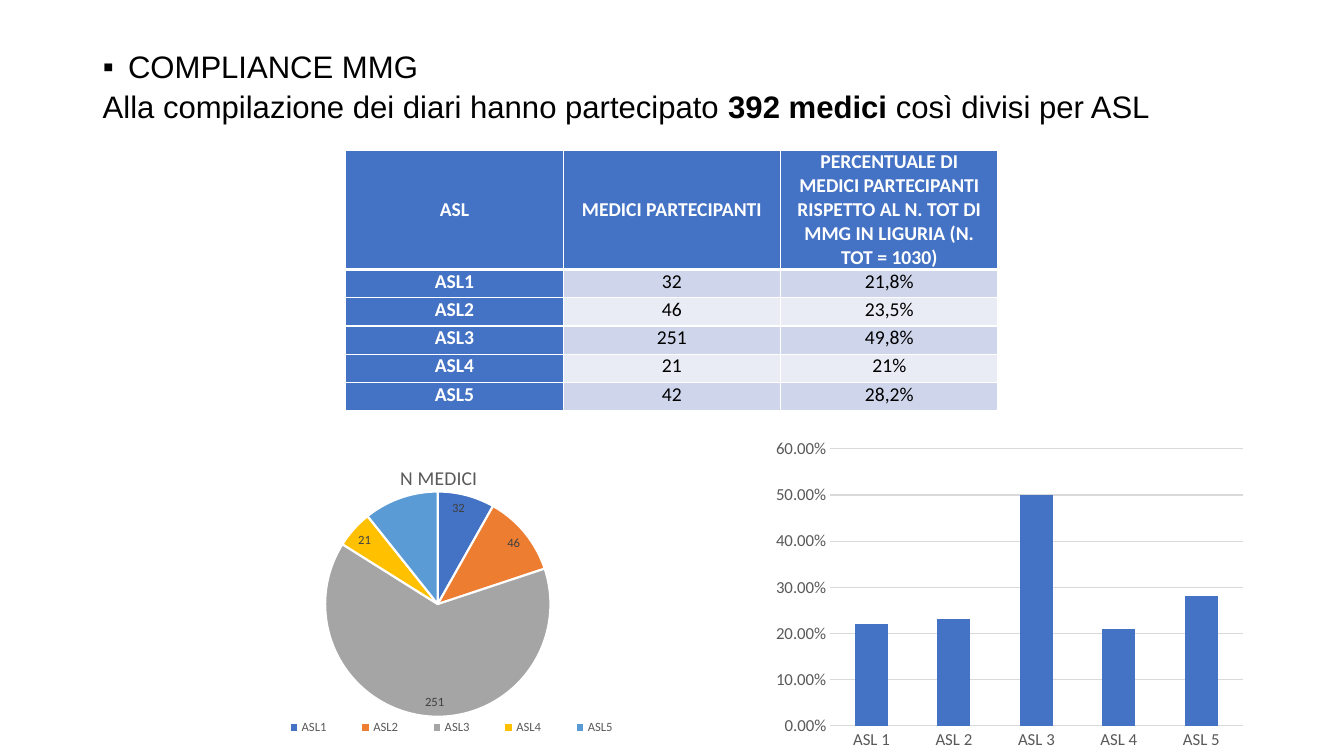
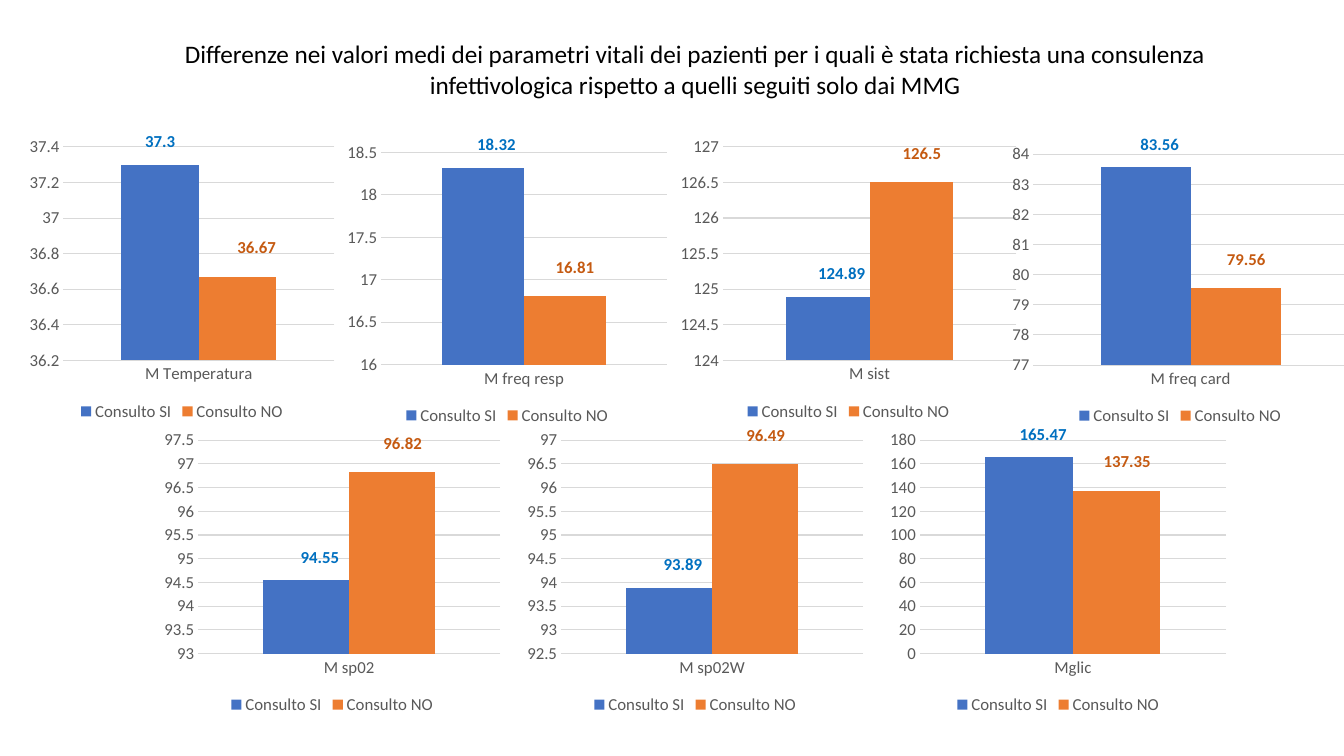
from lxml import etree
from pptx import Presentation
from pptx.chart.data import CategoryChartData
from pptx.dml.color import RGBColor
from pptx.enum.chart import XL_CHART_TYPE, XL_LABEL_POSITION, XL_LEGEND_POSITION, XL_TICK_MARK
from pptx.enum.text import MSO_ANCHOR, MSO_AUTO_SIZE, PP_ALIGN
from pptx.oxml.ns import qn
from pptx.util import Inches, Pt

COLUMNS, PIE = XL_CHART_TYPE.COLUMN_CLUSTERED, XL_CHART_TYPE.PIE
OUTSIDE, INSIDE = XL_LABEL_POSITION.OUTSIDE_END, XL_LABEL_POSITION.INSIDE_END
LEGEND_BOTTOM, NO_TICK = XL_LEGEND_POSITION.BOTTOM, XL_TICK_MARK.NONE
LEFT, CENTER = PP_ALIGN.LEFT, PP_ALIGN.CENTER
TOP, MIDDLE = MSO_ANCHOR.TOP, MSO_ANCHOR.MIDDLE
TITLE_ONLY = 5

# Shared look
BLACK, WHITE = RGBColor(0, 0, 0), RGBColor(255, 255, 255)
BLUE, ORANGE = RGBColor(0x44, 0x72, 0xC4), RGBColor(0xED, 0x7D, 0x31)
SLICES = [BLUE, ORANGE, RGBColor(0xA5, 0xA5, 0xA5), RGBColor(0xFF, 0xC0, 0),
          RGBColor(0x5B, 0x9B, 0xD5)]
BANDS = [RGBColor(0xCF, 0xD5, 0xEA), RGBColor(0xE9, 0xEB, 0xF5)]
GREY, GRID = RGBColor(0x59, 0x59, 0x59), RGBColor(0xD9, 0xD9, 0xD9)
DARK_GREY = RGBColor(0x40, 0x40, 0x40)
SI_LABEL, NO_LABEL = RGBColor(0, 0x70, 0xC0), RGBColor(0xC5, 0x5A, 0x11)
HEADING_FONT, BODY_FONT = "Arial", "Calibri"

# Slide 1 content
COMPLIANCE = "COMPLIANCE MMG"
PARTICIPATION = [("Alla compilazione dei diari hanno partecipato ", False),
                 ("392 medici", True), (" così divisi per ASL", False)]
HEADER = ["ASL", "MEDICI PARTECIPANTI",
          "PERCENTUALE DI MEDICI PARTECIPANTI RISPETTO AL N. TOT DI MMG "
          "IN LIGURIA (N. TOT = 1030)"]
DOCTORS = [("ASL1", 32, "21,8%"), ("ASL2", 46, "23,5%"), ("ASL3", 251, "49,8%"),
           ("ASL4", 21, "21%"), ("ASL5", 42, "28,2%")]
SHARES = {"ASL 1": 0.22, "ASL 2": 0.23, "ASL 3": 0.5, "ASL 4": 0.21, "ASL 5": 0.28}
TABLE_W = 6.47

# Slide 2 content: parameter, SI, NO, axis (minimum, maximum, step)
DIFFERENCES = ("Differenze nei valori medi dei parametri vitali dei pazienti per i quali è stata "
               "richiesta una consulenza infettivologica rispetto a quelli seguiti solo dai MMG")
VITALS = [("M Temperatura", 37.3, 36.67, (36.2, 37.4, 0.2)),
          ("M freq resp", 18.32, 16.81, (16, 18.5, 0.5)),
          ("M sist", 124.89, 126.5, (124, 127, 0.5)),
          ("M freq card", 83.56, 79.56, (77, 84, 1)),
          ("M sp02", 94.55, 96.82, (93, 97.5, 0.5)),
          ("M sp02W", 93.89, 96.49, (92.5, 97, 0.5)),
          ("Mglic", 165.47, 137.35, (0, 180, 20))]
CONSULTS = [("Consulto SI", BLUE, SI_LABEL), ("Consulto NO", ORANGE, NO_LABEL)]
VITAL_W, VITAL_H = 3.47, 2.92
UPPER_ROW = [(0.23, 1.3, 3.15), (3.38, 1.34, 3.3), (6.68, 1.3, VITAL_W), (9.97, 1.34, VITAL_W)]
LOWER_ROW = [(1.56 + 3.6 * column, 4.21, VITAL_W) for column in range(3)]
# Label shifts as shares of the chart, for SI and NO
LABEL_SHIFTS = [(0.04, -0.03), (0.03, -0.05)]
FIRST_SHIFTS = [(0, -0.03), (0.06, -0.05)]


def style_font(font, size, color=GREY, bold=False, name=BODY_FONT):
    font.size, font.bold, font.name = Pt(size), bold, name
    font.color.rgb = color


def write(frame, runs, size, color=BLACK, bold=False, name=BODY_FONT, align=LEFT,
          anchor=None, bullet=None):
    """Fill a text frame with one paragraph: a string or (text, bold) runs."""
    paragraph = frame.paragraphs[0]
    paragraph.alignment = align
    if anchor is not None:
        frame.word_wrap, frame.auto_size = True, MSO_AUTO_SIZE.NONE
        frame.vertical_anchor = anchor
    if bullet:
        properties = paragraph._p.get_or_add_pPr()
        properties.set("marL", str(Inches(0.25)))
        properties.set("indent", str(-Inches(0.25)))
        etree.SubElement(properties, qn("a:buFont")).set("typeface", name)
        etree.SubElement(properties, qn("a:buChar")).set("char", bullet)
    for text, strong in [(runs, bold)] if isinstance(runs, str) else runs:
        run = paragraph.add_run()
        run.text = text
        style_font(run.font, size, color, strong, name)


def place(shape, left, top, width, height):
    shape.left, shape.top = Inches(left), Inches(top)
    shape.width, shape.height = Inches(width), Inches(height)


def add_titled_slide(prs, text, box, **text_format):
    slide = prs.slides.add_slide(prs.slide_layouts[TITLE_ONLY])
    place(slide.shapes.title, *box)
    write(slide.shapes.title.text_frame, text, anchor=MIDDLE, **text_format)
    return slide


def set_layout(parent, index, **settings):
    """Give a chart part a manual position in shares of the chart."""
    for old in parent.findall(qn("c:layout")):
        parent.remove(old)
    layout = etree.Element(qn("c:layout"))
    manual = etree.SubElement(layout, qn("c:manualLayout"))
    for tag, value in settings.items():
        etree.SubElement(manual, qn("c:" + tag)).set("val", str(value))
    parent.insert(index, layout)


def hide_leader_lines(chart):
    for labels in chart._chartSpace.iter(qn("c:dLbls")):
        leader = labels.find(qn("c:showLeaderLines"))
        if leader is None:
            leader = etree.SubElement(labels, qn("c:showLeaderLines"))
        leader.set("val", "0")


def add_chart(slide, kind, box, categories, series, legend_size=None):
    data = CategoryChartData()
    data.categories = categories
    for name, values in series:
        data.add_series(name, values)
    chart = slide.shapes.add_chart(kind, *map(Inches, box), data).chart
    style_font(chart.font, 10, BLACK)
    chart.has_title = False
    chart.has_legend = legend_size is not None
    if legend_size:
        chart.legend.position = LEGEND_BOTTOM
        chart.legend.include_in_layout = False
        style_font(chart.legend.font, legend_size)
    return chart


def style_columns(chart, colors, scale, number_format="General"):
    plot = chart.plots[0]
    plot.gap_width, plot.overlap, plot.vary_by_categories = 150, 0, False
    for series, color in zip(plot.series, colors):
        series.format.fill.solid()
        series.format.fill.fore_color.rgb = color
    values = chart.value_axis
    values.minimum_scale, values.maximum_scale, values.major_unit = scale
    values.format.line.fill.background()
    values.tick_labels.number_format = number_format
    values.tick_labels.number_format_is_linked = False
    chart.category_axis.format.line.color.rgb = GRID
    values.major_gridlines.format.line.color.rgb = GRID
    values.major_gridlines.format.line.width = Pt(0.75)
    for axis in (values, chart.category_axis):
        axis.major_tick_mark = axis.minor_tick_mark = NO_TICK
        style_font(axis.tick_labels.font, 12)


def label_point(series, index, position, **font_format):
    label = series.points[index].data_label
    style_font(label.font, **font_format)
    label.position = position


def set_borders(cell, bottom):
    properties = cell._tc.get_or_add_tcPr()
    for side, width in (("L", 1), ("R", 1), ("T", 1), ("B", bottom)):
        line = etree.SubElement(properties, qn("a:ln" + side), w=str(Pt(width)))
        fill = etree.SubElement(line, qn("a:solidFill"))
        etree.SubElement(fill, qn("a:srgbClr"), val=str(WHITE))


def add_doctors_table(slide):
    rows = [HEADER, *DOCTORS]
    table = slide.shapes.add_table(len(rows), len(HEADER), Inches(3.43), Inches(1.49),
                                   Inches(TABLE_W), Inches(2.56)).table
    for column in table.columns:
        column.width = Inches(TABLE_W / len(HEADER))
    for r, row in enumerate(rows):
        table.rows[r].height = Inches(0.28 if r else 1.16)
        for c, value in enumerate(row):
            cell = table.cell(r, c)
            heading = r == 0 or c == 0
            cell.margin_left = cell.margin_right = Inches(0.09)
            cell.margin_top = cell.margin_bottom = 0
            cell.vertical_anchor = TOP if r else MIDDLE
            set_borders(cell, 1 if r else 3)
            cell.fill.solid()
            cell.fill.fore_color.rgb = BLUE if heading else BANDS[(r - 1) % 2]
            write(cell.text_frame, str(value), 14, WHITE if heading else BLACK,
                  bold=heading, align=CENTER)


def add_doctors_pie(slide):
    names, counts, _ = zip(*DOCTORS)
    chart = add_chart(slide, PIE, (1.59, 4.24, 5.45, 3.31), names,
                      [("N MEDICI", counts)], legend_size=9)
    chart.has_title = True
    write(chart.chart_title.text_frame, "N MEDICI", 14, GREY, align=CENTER)
    chart.plots[0].vary_by_categories = True
    series = chart.plots[0].series[0]
    series.data_labels.show_value = False
    for index, color in enumerate(SLICES):
        slice_format = series.points[index].format
        slice_format.fill.solid()
        slice_format.fill.fore_color.rgb = color
        slice_format.line.color.rgb = WHITE
        slice_format.line.width = Pt(1.5)
    for index in range(len(SLICES) - 1):  # the last slice has no label
        label_point(series, index, INSIDE, size=9, color=DARK_GREY)
    hide_leader_lines(chart)
    root = chart._chartSpace
    edges = {"xMode": "edge", "yMode": "edge"}
    set_layout(next(root.iter(qn("c:title"))), 1, **edges, x=0.43, y=0.1)
    set_layout(next(root.iter(qn("c:plotArea"))), 0, layoutTarget="inner", **edges,
               x=0.3, y=0.19, w=0.41, h=0.68)
    set_layout(next(root.iter(qn("c:legend"))), 1, **edges, x=0.18, y=0.86, w=0.7, h=0.08)


def add_vital_chart(slide, vital, spot, shifts):
    name, *means, scale = vital
    left, top, width = spot
    series = [(consult[0], [mean]) for consult, mean in zip(CONSULTS, means)]
    chart = add_chart(slide, COLUMNS, (left, top, width, VITAL_H), [name], series, 12)
    style_columns(chart, [color for _, color, _ in CONSULTS], scale)
    for bar, (_, _, color) in zip(chart.plots[0].series, CONSULTS):
        label_point(bar, 0, OUTSIDE, size=12, color=color, bold=True)
    hide_leader_lines(chart)
    for label, (x, y) in zip(chart._chartSpace.iter(qn("c:dLbl")), shifts):
        set_layout(label, 1, x=x, y=y)


def main():
    prs = Presentation()
    prs.slide_width, prs.slide_height = Inches(13.33), Inches(7.5)

    # Slide 1: doctors who took part
    compliance = add_titled_slide(prs, COMPLIANCE, (0.92, 0.44, 11.5, 0.44), size=22.2,
                                  name=HEADING_FONT, bullet="▪")
    participation = compliance.shapes.add_textbox(0, 0, 0, 0)
    place(participation, 0.92, 0.83, 11.5, 0.44)
    write(participation.text_frame, PARTICIPATION, 22.2, name=HEADING_FONT, anchor=MIDDLE)
    add_doctors_table(compliance)
    add_doctors_pie(compliance)
    shares = add_chart(compliance, COLUMNS, (7.6, 4.29, 4.82, 3.21), list(SHARES),
                       [("Series 1", list(SHARES.values()))])
    style_columns(shares, [BLUE], (0, 0.6, 0.1), "0.00%")

    # Slide 2: vital signs with and without consultation
    vitals = add_titled_slide(prs, DIFFERENCES, (1, 0.33, 11.79, 0.71), size=18, align=CENTER)
    for index, (vital, spot) in enumerate(zip(VITALS, UPPER_ROW + LOWER_ROW)):
        add_vital_chart(vitals, vital, spot, LABEL_SHIFTS if index else FIRST_SHIFTS)

    prs.save("out.pptx")


if __name__ == "__main__":
    main()
